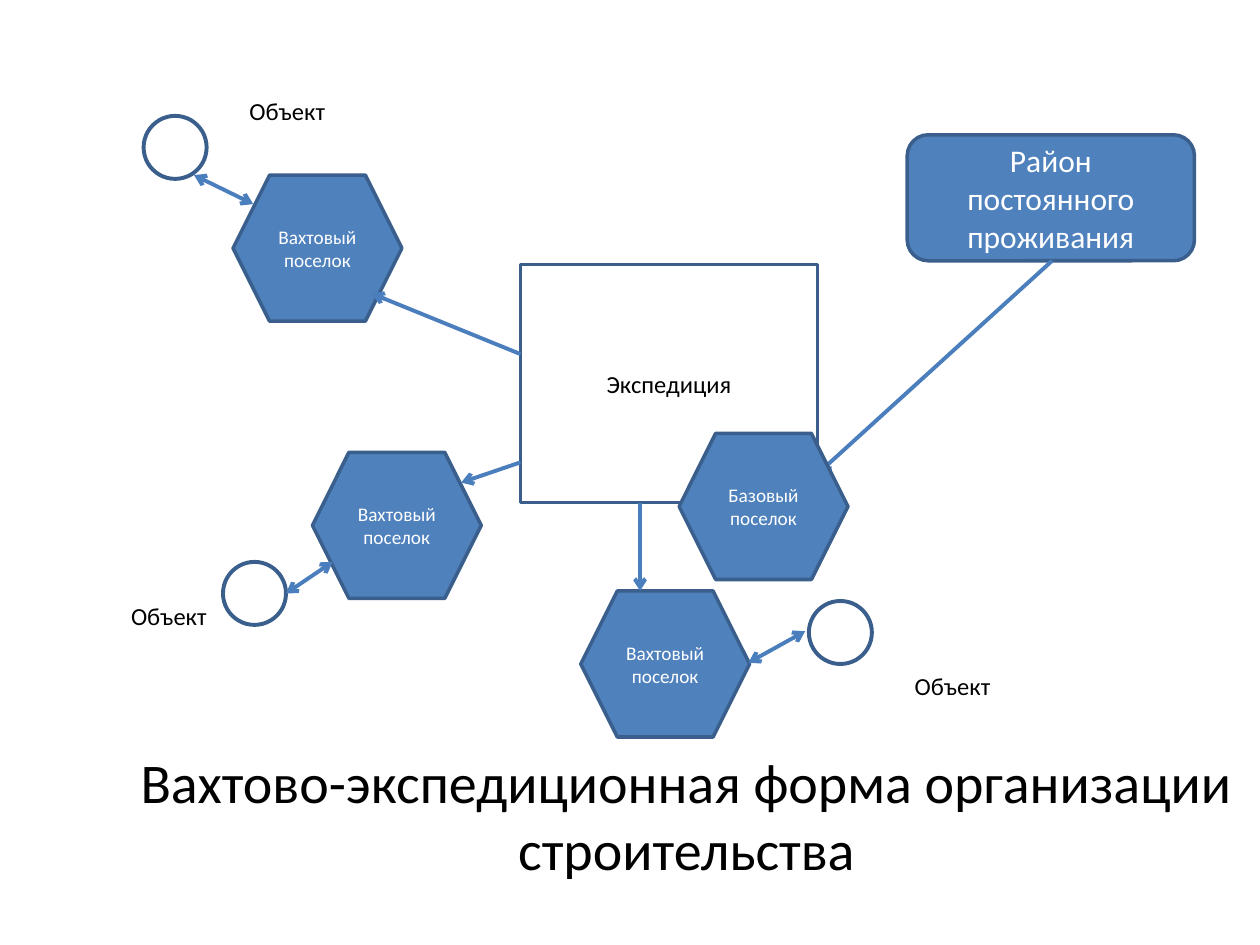
"""Build the slide on the shift-expedition form of construction."""
from lxml.etree import SubElement
from pptx import Presentation
from pptx.dml.color import RGBColor
from pptx.enum.shapes import MSO_CONNECTOR, MSO_SHAPE
from pptx.enum.text import MSO_ANCHOR, PP_ALIGN
from pptx.oxml.ns import qn
from pptx.util import Inches, Pt

COLORS = {"fill": "4F81BD", "outline": "3A5F8C", "link": "4B7EBC",
          "dark": "000000", "light": "FFFFFF"}
FONT = "Calibri"
HEX_SIZE = (1.34, 1.16)
SITE_SIZE = (0.5, 0.5)
LABEL_SIZE = (1.02, 0.24)

TITLE = "Вахтово-экспедиционная форма организации строительства"
HOME = "Район постоянного проживания"
CAMP = "Вахтовый поселок"
BASE = "Базовый поселок"
EXPEDITION = "Экспедиция"
SITE = "Объект"

CAMPS = [(2.48, 3.59), (4.61, 4.69), (1.85, 1.39)]
SITES = [(1.14, 0.92), (1.77, 4.46), (6.42, 4.77)]
SITE_LABELS = [(1.77, 0.76), (7.05, 5.32), (0.83, 4.77)]
HOME_LINK = ((8.35, 2.07), (6.5, 3.75))
SITE_LINKS = [((1.54, 1.39), (2.01, 1.62)),
              ((2.27, 4.71), (2.64, 4.46)),
              ((5.94, 5.26), (6.39, 5.01))]
CAMP_LINKS = [((4.13, 2.81), (2.95, 2.33)),
              ((4.13, 3.67), (3.66, 3.83)),
              ((5.08, 3.99), (5.08, 4.69))]


def rgb(name):
    return RGBColor.from_string(COLORS[name])


def write(sp, text, size=14, color="dark"):
    tf = sp.text_frame
    tf.word_wrap = True
    tf.vertical_anchor = MSO_ANCHOR.MIDDLE
    p = tf.paragraphs[0]
    p.alignment = PP_ALIGN.CENTER
    r = p.add_run()
    r.text = text
    r.font.name = FONT
    r.font.size = Pt(size)
    r.font.color.rgb = rgb(color)


def add_text(s, pos, dims, text, size=14):
    write(s.shapes.add_textbox(*map(Inches, pos + dims)), text, size)


def add_node(s, kind, pos, dims, text="", size=14, color="light", fill=None, width=2):
    sp = s.shapes.add_shape(kind, *map(Inches, pos + dims))
    sp.shadow.inherit = False
    if fill:
        sp.fill.solid()
        sp.fill.fore_color.rgb = rgb(fill)
    else:
        sp.fill.background()
    sp.line.color.rgb = rgb("outline")
    sp.line.width = Pt(width)
    if text:
        write(sp, text, size, color)


def add_hexagon(s, pos, text):
    add_node(s, MSO_SHAPE.HEXAGON, pos, HEX_SIZE, text, size=11, fill="fill")


def add_link(s, start, end, ends=("tailEnd",)):
    c = s.shapes.add_connector(MSO_CONNECTOR.STRAIGHT, *map(Inches, start + end))
    c.line.color.rgb = rgb("link")
    c.line.width = Pt(2.25)
    ln = c.line._get_or_add_ln()
    for tag in ends:
        SubElement(ln, qn(f"a:{tag}"), type="arrow")
    SubElement(c._element.spPr, qn("a:effectLst"))


def main():
    prs = Presentation()
    prs.slide_width, prs.slide_height = Inches(10), Inches(7.5)
    s = prs.slides.add_slide(prs.slide_layouts[6])

    add_text(s, (0.9, 5.8), (9.1, 1.33), TITLE, size=32)
    add_node(s, MSO_SHAPE.ROUNDED_RECTANGLE, (7.2, 1.07), (2.28, 1), HOME,
             size=18, fill="fill")
    for pos in CAMPS:
        add_hexagon(s, pos, CAMP)
    for pos in SITES:
        add_node(s, MSO_SHAPE.FLOWCHART_CONNECTOR, pos, SITE_SIZE, width=2.25)
    add_link(s, *HOME_LINK)
    for start, end in SITE_LINKS:
        add_link(s, start, end, ends=("headEnd", "tailEnd"))
    for pos in SITE_LABELS:
        add_text(s, pos, LABEL_SIZE, SITE)
    add_node(s, MSO_SHAPE.RECTANGLE, (4.13, 2.1), (2.36, 1.89), EXPEDITION, color="dark")
    add_hexagon(s, (5.39, 3.44), BASE)
    for start, end in CAMP_LINKS:
        add_link(s, start, end)

    prs.save("out.pptx")


if __name__ == "__main__":
    main()
